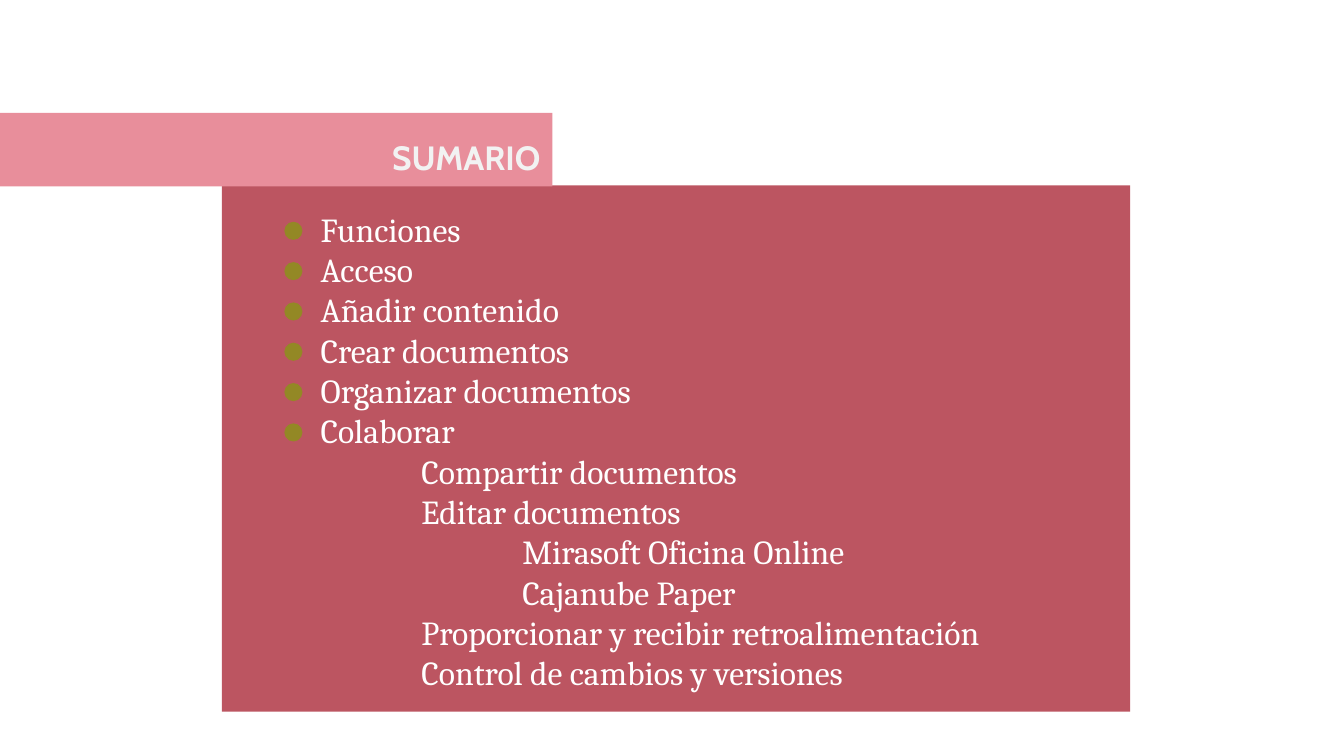
from dataclasses import dataclass

from lxml import etree
from pptx import Presentation
from pptx import util as u
from pptx.dml.color import RGBColor
from pptx.enum import shapes, text
from pptx.oxml import ns

WHITE = RGBColor(0xFF, 0xFF, 0xFF)
PALE = RGBColor(0xF2, 0xF2, 0xF2)
ROSE = RGBColor(0xBC, 0x55, 0x61)
PINK = RGBColor(0xE8, 0x8E, 0x9B)
OLIVE = RGBColor(0x93, 0x88, 0x25)

TITLE_FONT = {"name": "Cabin", "size": u.Pt(24), "bold": True}
LIST_FONT = {"name": "Cambria", "size": u.Pt(24), "bold": False}
FRAME = {"word_wrap": True, "auto_size": text.MSO_AUTO_SIZE.NONE,
         "vertical_anchor": text.MSO_ANCHOR.TOP,
         **{f"margin_{side}": u.Inches(0.13)
            for side in ("left", "top", "right", "bottom")}}
LINE_STEP = 0.4


@dataclass(frozen=True)
class Box:
    left: float
    top: float
    width: float
    height: float


@dataclass(frozen=True)
class Topic:
    label: str
    level: int = 1


TOPICS = [
    Topic("Funciones"),
    Topic("Acceso"),
    Topic("Añadir contenido"),
    Topic("Crear documentos"),
    Topic("Organizar documentos"),
    Topic("Colaborar"),
    Topic("Compartir documentos", 2),
    Topic("Editar documentos", 2),
    Topic("Mirasoft Oficina Online", 3),
    Topic("Cajanube Paper", 3),
    Topic("Proporcionar y recibir retroalimentación", 2),
    Topic("Control de cambios y versiones", 2),
]


def apply(target, values: dict) -> None:
    for name, value in values.items():
        setattr(target, name, value)


def add_filled(s, kind, box: Box, color: RGBColor) -> None:
    sp = s.shapes.add_shape(kind, u.Inches(box.left), u.Inches(box.top),
                            u.Inches(box.width), u.Inches(box.height))
    sp.shadow.inherit = False
    sp.fill.solid()
    sp.fill.fore_color.rgb = color
    sp.line.fill.background()


def place(s, sp, box: Box):
    """Move a placeholder to its box, in front of the panels."""
    apply(sp, {"left": u.Inches(box.left), "top": u.Inches(box.top),
               "width": u.Inches(box.width), "height": u.Inches(box.height)})
    s.shapes._spTree.append(sp._element)
    apply(sp.text_frame, FRAME)
    return sp.text_frame


def write(p, label: str, font: dict, color: RGBColor) -> None:
    r = p.add_run()
    r.text = label
    apply(r.font, font)
    r.font.color.rgb = color


def add_topic(p, topic: Topic) -> None:
    pPr = p._p.get_or_add_pPr()
    pPr.set("marL", str(u.Inches(topic.level)))
    pPr.set("indent", "0")
    etree.SubElement(pPr, ns.qn("a:buNone"))
    apply(p, {"level": topic.level - 1, "space_before": u.Pt(0),
              "line_spacing": 1.0, "alignment": text.PP_ALIGN.LEFT})
    write(p, topic.label, LIST_FONT, WHITE)


def main() -> None:
    prs = Presentation()
    prs.slide_width, prs.slide_height = u.Inches(13.33), u.Inches(7.5)
    s = prs.slides.add_slide(prs.slide_layouts[1])

    # Panels
    rect = shapes.MSO_SHAPE.RECTANGLE
    add_filled(s, rect, Box(2.2, 1.84, 9.01, 5.22), ROSE)
    add_filled(s, rect, Box(0, 1.12, 5.48, 0.73), PINK)

    # Title
    tf = place(s, s.shapes.title, Box(2.4, 1.23, 3.09, 0.48))
    tf.paragraphs[0].alignment = text.PP_ALIGN.RIGHT
    write(tf.paragraphs[0], "SUMARIO", TITLE_FONT, PALE)

    # Topic list
    tf = place(s, s.placeholders[1], Box(2.05, 1.94, 8.45, 5.03))
    for i, topic in enumerate(TOPICS):
        add_topic(tf.add_paragraph() if i else tf.paragraphs[0], topic)

    # Dots beside the main topics
    for i in range(sum(topic.level == 1 for topic in TOPICS)):
        add_filled(s, shapes.MSO_SHAPE.OVAL,
                   Box(2.82, 2.2 + i * LINE_STEP, 0.18, 0.18), OLIVE)

    prs.save("out.pptx")


if __name__ == "__main__":
    main()
